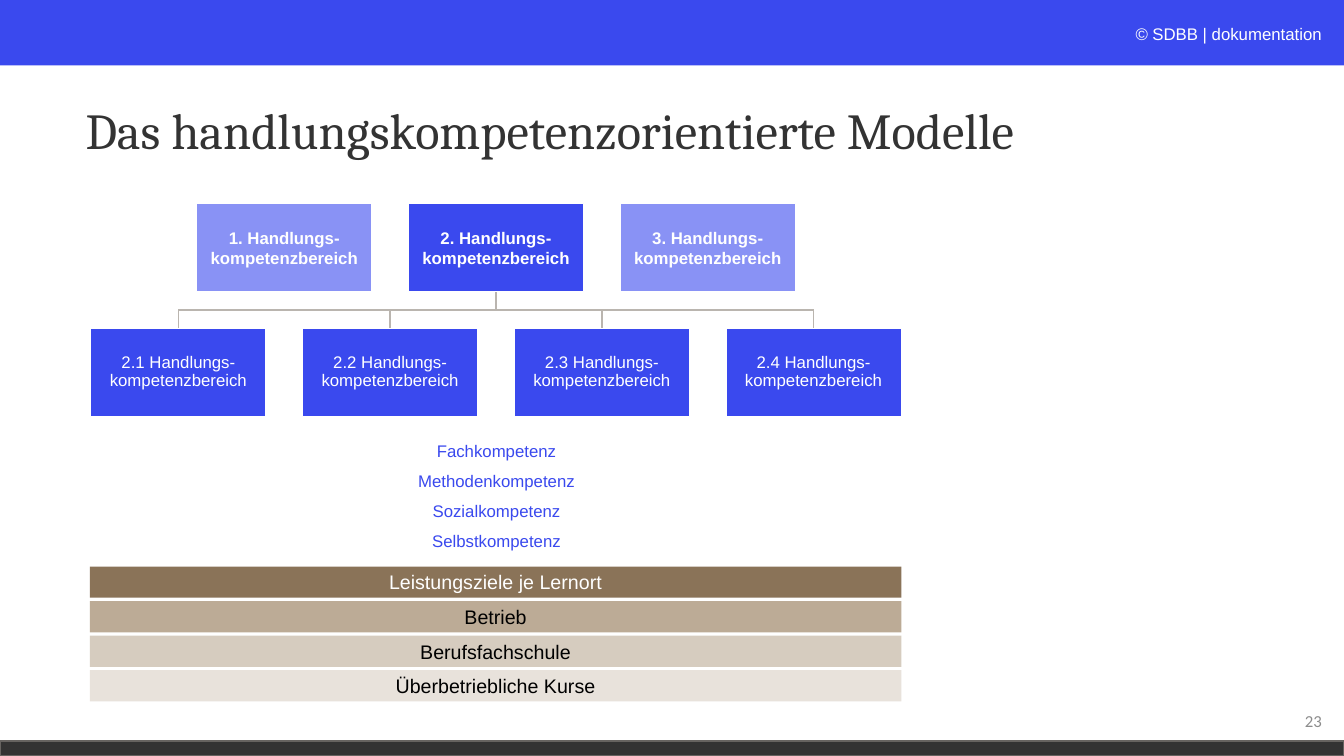
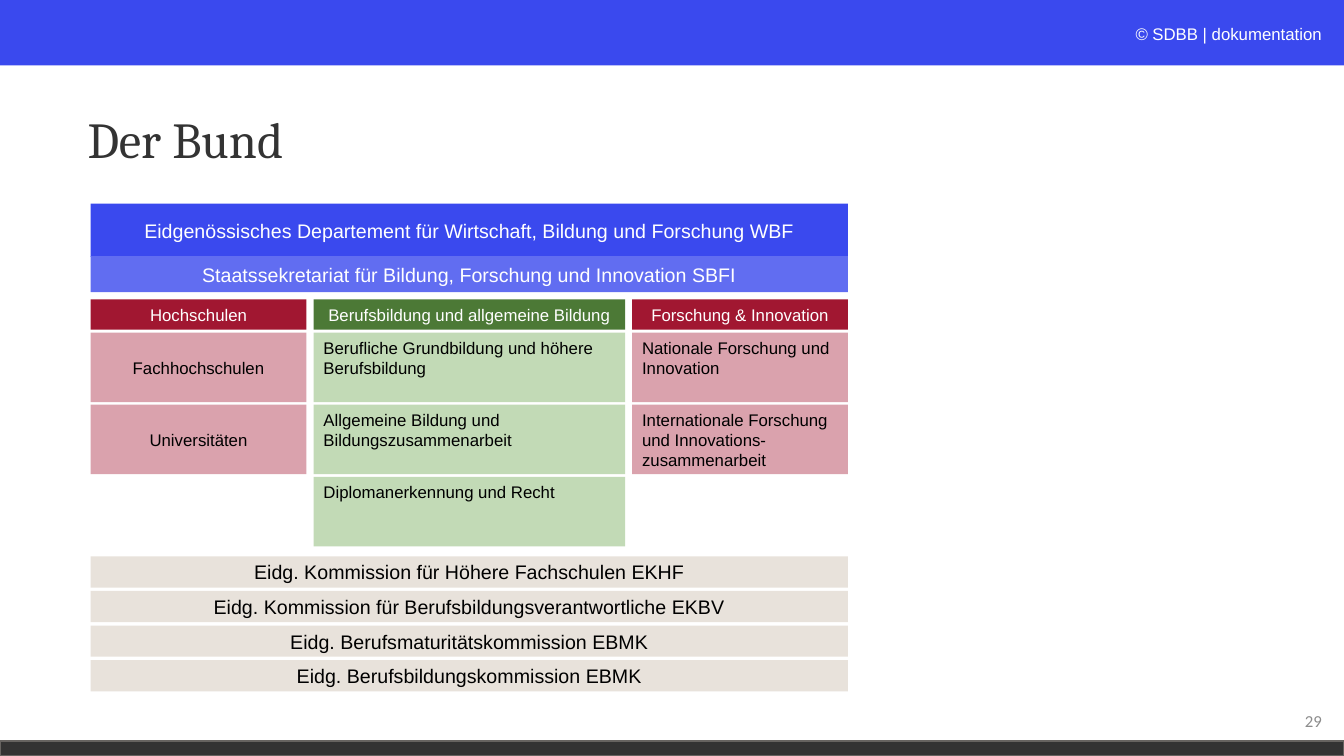
from lxml import etree
from pptx import Presentation
from pptx.dml.color import RGBColor
from pptx.enum.shapes import MSO_CONNECTOR, MSO_SHAPE
from pptx.enum.text import MSO_ANCHOR as ANCHOR, PP_ALIGN as ALIGN
from pptx.oxml.ns import qn
from pptx.util import Inches, Pt

SLIDE_W, SLIDE_H = 13.33, 7.5
COLORS = {
    "blue": "3A49EE", "mid_blue": "616DF1", "light_blue": "8992F5",
    "dark": "333333", "dark_edge": "666360", "gray": "8C8C8C", "line": "BAB5AF",
    "white": "FFFFFF", "off_white": "FCFDFE", "black": "000000",
    "brown": "8A7358", "tan": "BCAB96", "sand": "D6CCBF", "cream": "E8E2DB",
    "red": "A11731", "pink": "DAA2AD", "green": "4C7936", "light_green": "C2DAB6",
}


def rgb(name):
    return RGBColor.from_string(COLORS[name])


def write(sp, text, size, color, font="Arial", align=ALIGN.CENTER,
          anchor=ANCHOR.MIDDLE, spacing=None, bold=False, margin=None):
    """Fill a shape with text; each line of text becomes a paragraph."""
    tf = sp.text_frame
    tf.word_wrap = True
    tf.vertical_anchor = anchor
    if margin is not None:
        tf.margin_left = tf.margin_right = Inches(margin)
        tf.margin_top = tf.margin_bottom = Inches(margin)
    tf.text = text
    for p in tf.paragraphs:
        p.alignment = align
        p.line_spacing = spacing
        for r in p.runs:
            r.font.name, r.font.size, r.font.bold = font, Pt(size), bold
            r.font.color.rgb = rgb(color)
    return tf


def add_text(s, x, y, w, h, text, size, color, **style):
    sp = s.shapes.add_textbox(Inches(x), Inches(y), Inches(w), Inches(h))
    return write(sp, text, size, color, **style)


def add_rect(s, x, y, w, h, fill, edge=None):
    sp = s.shapes.add_shape(MSO_SHAPE.RECTANGLE, Inches(x), Inches(y), Inches(w), Inches(h))
    sp.shadow.inherit = False
    sp.fill.solid()
    sp.fill.fore_color.rgb = rgb(fill)
    if edge:
        sp.line.color.rgb = rgb(edge)
        sp.line.width = Pt(1)
    else:
        sp.line.fill.background()
    return sp


def add_line(s, x1, y1, x2, y2):
    c = s.shapes.add_connector(MSO_CONNECTOR.STRAIGHT,
                               Inches(x1), Inches(y1), Inches(x2), Inches(y2))
    c.line.color.rgb = rgb("line")
    c.line.width = Pt(1)
    etree.SubElement(c.element.spPr, qn("a:effectLst"))


def new_slide(prs, title, number, title_x, title_y):
    s = prs.slides.add_slide(prs.slide_layouts[6])
    add_rect(s, 0, 0, SLIDE_W, 0.65, "blue")
    add_rect(s, 0, SLIDE_H - 0.15, SLIDE_W, 0.15, "dark", "dark_edge")
    tf = add_text(s, 8.62, 0.19, 4.59, 0.3, "© ", 12, "off_white",
                  align=ALIGN.RIGHT, anchor=ANCHOR.TOP)
    p = tf.paragraphs[0]
    p.runs[0].font.italic = True
    r = p.add_run()
    r.text = "SDBB | dokumentation"
    r.font.name, r.font.size = "Arial", Pt(12)
    r.font.color.rgb = rgb("white")
    add_text(s, 10.21, 6.95, 3, 0.4, str(number), 12, "gray",
             font="Calibri", align=ALIGN.RIGHT)
    add_text(s, title_x, title_y, 11.5, 1.45, title, 36, "dark",
             font="Cambria", align=ALIGN.LEFT, spacing=0.9)
    return s


def band_stack(s, x, y, w, bands):
    """Stack equal full-width bands given as (text, fill, text colour)."""
    for i, (text, fill, color) in enumerate(bands):
        write(add_rect(s, x, y + i * 0.343, w, 0.31, fill), text, 14, color)


def competence_tree(s, x, y):
    box_w, box_h, step, row_step = 1.74, 0.87, 2.1, 1.24
    areas = ["light_blue", "blue", "light_blue"]
    area_x = x + step / 2
    center = area_x + step + box_w / 2
    child_y = y + row_step
    rail_y = (y + box_h + child_y) / 2
    drops = [x + i * step + box_w / 2 for i in range(4)]

    add_line(s, center, y + box_h, center, rail_y)
    add_line(s, drops[0], rail_y, drops[-1], rail_y)
    for drop in drops:
        add_line(s, drop, rail_y, drop, child_y)

    for i, fill in enumerate(areas):
        sp = add_rect(s, area_x + i * step, y, box_w, box_h, fill, "white")
        write(sp, f"{i + 1}. Handlungs-kompetenzbereich", 12, "white", bold=True, margin=0.01)
    for i in range(len(drops)):
        sp = add_rect(s, x + i * step, child_y, box_w, box_h, "blue", "white")
        write(sp, f"2.{i + 1} Handlungs-kompetenzbereich", 12, "white",
              spacing=0.9, margin=0.01)


def division_column(s, x, y, w, head, entries, fills, **style):
    """Place a header over a column of equal cells."""
    head_fill, cell_fill = fills
    write(add_rect(s, x, y, w, 0.3, head_fill), head, 12, "white")
    for i, text in enumerate(entries):
        sp = add_rect(s, x, y + 0.33 + i * 0.715, w, 0.69, cell_fill)
        write(sp, text, 12, "black", **style)


def model_slide(prs):
    s = new_slide(prs, "Das handlungskompetenzorientierte Modelle", 23, 0.75, 0.6)
    competence_tree(s, 0.9, 2.02)
    skills = ["Fachkompetenz", "Methodenkompetenz", "Sozialkompetenz", "Selbstkompetenz"]
    add_text(s, 4.03, 4.22, 1.79, 1.28, "\n".join(skills), 12, "blue",
             anchor=ANCHOR.TOP, spacing=1.5)
    band_stack(s, 0.89, 5.62, 8.05, [
        ("Leistungsziele je Lernort", "brown", "white"),
        ("Betrieb", "tan", "black"),
        ("Berufsfachschule", "sand", "black"),
        ("Überbetriebliche Kurse", "cream", "black"),
    ])


def federal_slide(prs):
    s = new_slide(prs, "Der Bund", 29, 0.77, 0.69)
    x, w, side_w, gap = 0.9, 7.51, 2.14, 0.07
    write(add_rect(s, x, 2.02, w, 0.53, "blue"),
          "Eidgenössisches Departement für Wirtschaft, Bildung und Forschung WBF", 14, "white")
    write(add_rect(s, x, 2.54, w, 0.36, "mid_blue"),
          "Staatssekretariat für Bildung, Forschung und Innovation SBFI", 14, "white")

    top_left = {"align": ALIGN.LEFT, "anchor": ANCHOR.TOP}
    reds, greens = ("red", "pink"), ("green", "light_green")
    y = 2.97
    division_column(s, x, y, side_w, "Hochschulen",
                    ["Fachhochschulen", "Universitäten"], reds)
    division_column(s, x + side_w + gap, y, w - 2 * (side_w + gap),
                    "Berufsbildung und allgemeine Bildung",
                    ["Berufliche Grundbildung und höhere Berufsbildung",
                     "Allgemeine Bildung und Bildungszusammenarbeit",
                     "Diplomanerkennung und Recht"], greens, **top_left)
    division_column(s, x + w - side_w, y, side_w, "Forschung & Innovation",
                    ["Nationale Forschung und Innovation",
                     "Internationale Forschung und Innovations-zusammenarbeit"],
                    reds, **top_left)

    commissions = ["Kommission für Höhere Fachschulen EKHF",
                   "Kommission für Berufsbildungsverantwortliche EKBV",
                   "Berufsmaturitätskommission EBMK",
                   "Berufsbildungskommission EBMK"]
    band_stack(s, x, 5.52, w, [(f"Eidg. {name}", "cream", "black") for name in commissions])


def main():
    prs = Presentation()
    prs.slide_width, prs.slide_height = Inches(SLIDE_W), Inches(SLIDE_H)
    model_slide(prs)
    federal_slide(prs)
    prs.save("out.pptx")


if __name__ == "__main__":
    main()
